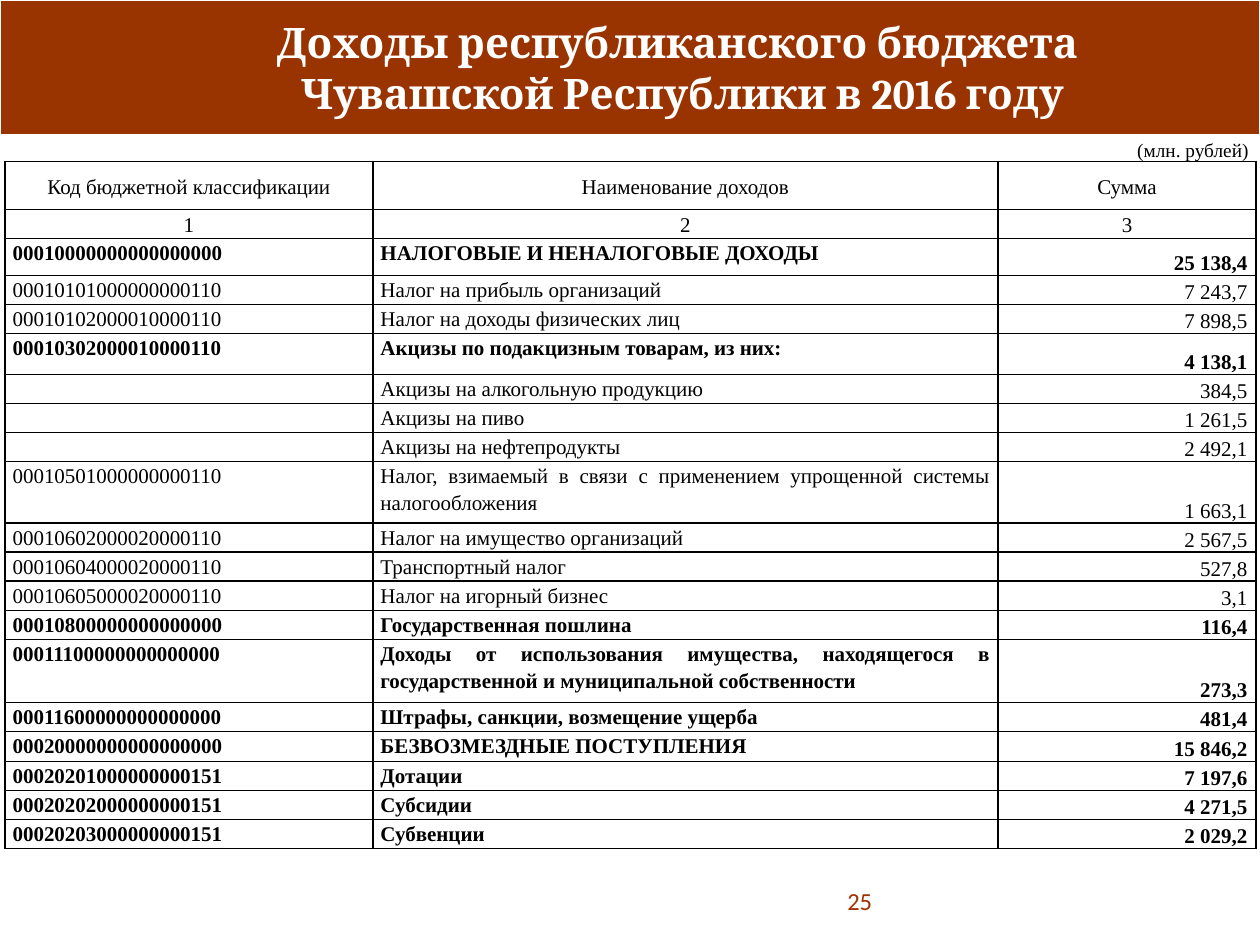
from lxml import etree
from pptx import Presentation
from pptx.dml.color import RGBColor
from pptx.enum.shapes import MSO_SHAPE
from pptx.enum.text import MSO_ANCHOR, PP_ALIGN
from pptx.oxml.ns import qn
from pptx.util import Inches, Pt

RUST = RGBColor(0x99, 0x33, 0x00)
BROWN = RGBColor(0xA0, 0x32, 0x02)
WHITE = RGBColor(0xFF, 0xFF, 0xFF)
BLACK = RGBColor(0x00, 0x00, 0x00)
LEFT, CENTER, RIGHT, JUSTIFY = (PP_ALIGN.LEFT, PP_ALIGN.CENTER,
                                PP_ALIGN.RIGHT, PP_ALIGN.JUSTIFY)
TOP, MIDDLE, BOTTOM = MSO_ANCHOR.TOP, MSO_ANCHOR.MIDDLE, MSO_ANCHOR.BOTTOM
RECTANGLE = MSO_SHAPE.RECTANGLE

GRID_COLS, GRID_ROWS = 100, 75
COL_WIDTHS = (29.2, 49.6, 20.5)
LINE = 2.13  # height of a one-line table row
HEADERS = ("Код бюджетной классификации", "Наименование доходов", "Сумма")

# code, name, amount, bold, row height
INCOME = [
    ("00010000000000000000", "НАЛОГОВЫЕ И НЕНАЛОГОВЫЕ ДОХОДЫ", "25 138,4", True, 2.95),
    ("00010101000000000110", "Налог на прибыль организаций", "7 243,7", False, LINE),
    ("00010102000010000110", "Налог на доходы физических лиц", "7 898,5", False, LINE),
    ("00010302000010000110", "Акцизы по подакцизным товарам, из них:", "4 138,1", True, 3.25),
    ("", "Акцизы на алкогольную продукцию", "384,5", False, LINE),
    ("", "Акцизы на пиво", "1 261,5", False, LINE),
    ("", "Акцизы на нефтепродукты", "2 492,1", False, LINE),
    ("00010501000000000110", "Налог, взимаемый в связи с применением упрощенной "
     "системы налогообложения", "1 663,1", False, 4.9),
    ("00010602000020000110", "Налог на имущество организаций", "2 567,5", False, LINE),
    ("00010604000020000110", "Транспортный налог", "527,8", False, LINE),
    ("00010605000020000110", "Налог на игорный бизнес", "3,1", False, LINE),
    ("00010800000000000000", "Государственная пошлина", "116,4", True, LINE),
    ("00011100000000000000", "Доходы от использования имущества, находящегося в "
     "государственной и муниципальной собственности", "273,3", True, 5),
    ("00011600000000000000", "Штрафы, санкции, возмещение ущерба", "481,4", True, 2.2),
    ("00020000000000000000", "БЕЗВОЗМЕЗДНЫЕ ПОСТУПЛЕНИЯ", "15 846,2", True, 2.4),
    ("00020201000000000151", "Дотации", "7 197,6", True, LINE),
    ("00020202000000000151", "Субсидии", "4 271,5", True, LINE),
    ("00020203000000000151", "Субвенции", "2 029,2", True, LINE),
]


class SlideBuilder:
    """Draws on one slide; lengths are columns and rows of its grid."""

    def __init__(self, prs):
        self.slide = prs.slides.add_slide(prs.slide_layouts[6])
        self.col = prs.slide_width / GRID_COLS
        self.row = prs.slide_height / GRID_ROWS

    def box(self, x, y, w, h):
        return (round(x * self.col), round(y * self.row),
                round(w * self.col), round(h * self.row))

    def style(self, p, font, size, color, align, bold=False):
        p.alignment = align
        p.font.name = font
        p.font.size = Pt(size)
        p.font.bold = bold
        p.font.color.rgb = color

    def band(self, x, y, w, h):
        s = self.slide.shapes.add_shape(RECTANGLE, *self.box(x, y, w, h))
        s.shadow.inherit = False
        s.fill.solid()
        s.fill.fore_color.rgb = RUST
        s.line.color.rgb = WHITE
        s.line.width = Pt(0.75)

    def text(self, x, y, w, h, text, *style, **options):
        tf = self.slide.shapes.add_textbox(*self.box(x, y, w, h)).text_frame
        tf.word_wrap = True
        tf.vertical_anchor = MIDDLE
        p = tf.paragraphs[0]
        p.text = text
        self.style(p, *style, **options)

    def table(self, x, y, widths, heights):
        s = self.slide.shapes.add_table(
            len(heights), len(widths), *self.box(x, y, sum(widths), sum(heights)))
        table = s.table
        table.first_row = table.horz_banding = False
        for column, width in zip(table.columns, widths):
            column.width = round(width * self.col)
        for row, height in zip(table.rows, heights):
            row.height = round(height * self.row)
        return table

    def cell(self, cell, text, align, anchor, bold=False, size=12,
             inset=0.06, edges="LRTB"):
        cell.margin_left = cell.margin_right = Inches(inset)
        cell.margin_top = cell.margin_bottom = 0
        cell.vertical_anchor = anchor
        self.borders(cell, edges)
        cell.fill.background()
        p = cell.text_frame.paragraphs[0]
        p.line_spacing = 1.15
        self.style(p, "Times New Roman", size, BLACK, align, bold)
        if text:
            p.text = text
        else:
            etree.SubElement(p._p, qn("a:endParaRPr"), sz=str(size * 100))

    def borders(self, cell, edges):
        """Draw the named edges and clear the others."""
        tc_pr = cell._tc.get_or_add_tcPr()
        for edge in "LRTB":
            ln = etree.SubElement(tc_pr, qn(f"a:ln{edge}"), w=str(Pt(1)))
            if edge in edges:
                fill = etree.SubElement(ln, qn("a:solidFill"))
                etree.SubElement(fill, qn("a:srgbClr"), val=str(BLACK))
            else:
                etree.SubElement(ln, qn("a:noFill"))


def add_income_table(sb):
    heights = [1.95, 3.8, LINE] + [item[-1] for item in INCOME]
    table = sb.table(0.4, 10.7, COL_WIDTHS, heights)
    table.cell(0, 1).merge(table.cell(0, 2))
    for c, text in enumerate(("", "(млн. рублей)", "")):
        sb.cell(table.cell(0, c), text, RIGHT, BOTTOM, size=11, edges="B")
    for r, labels in enumerate((HEADERS, "123"), start=1):
        for c, label in enumerate(labels):
            sb.cell(table.cell(r, c), label, CENTER, MIDDLE)
    for r, (code, name, amount, bold, _) in enumerate(INCOME, start=3):
        sb.cell(table.cell(r, 0), code, LEFT, TOP, bold)
        sb.cell(table.cell(r, 1), name, JUSTIFY, TOP, bold)
        sb.cell(table.cell(r, 2), amount, RIGHT, BOTTOM, bold, inset=0.07)


def main():
    prs = Presentation()
    prs.slide_width, prs.slide_height = Inches(10), Inches(7.5)
    sb = SlideBuilder(prs)
    sb.band(0, 0, 100, 10.7)
    sb.text(8.3, 0, 91.7, 10.7,
            "Доходы республиканского бюджета \vЧувашской Республики в 2016 году",
            "Cambria", 24, WHITE, CENTER, bold=True)
    add_income_table(sb)
    sb.text(58.7, 69.5, 11.5, 4, "25", "Calibri", 14, BROWN, RIGHT)
    prs.save("out.pptx")


if __name__ == "__main__":
    main()
